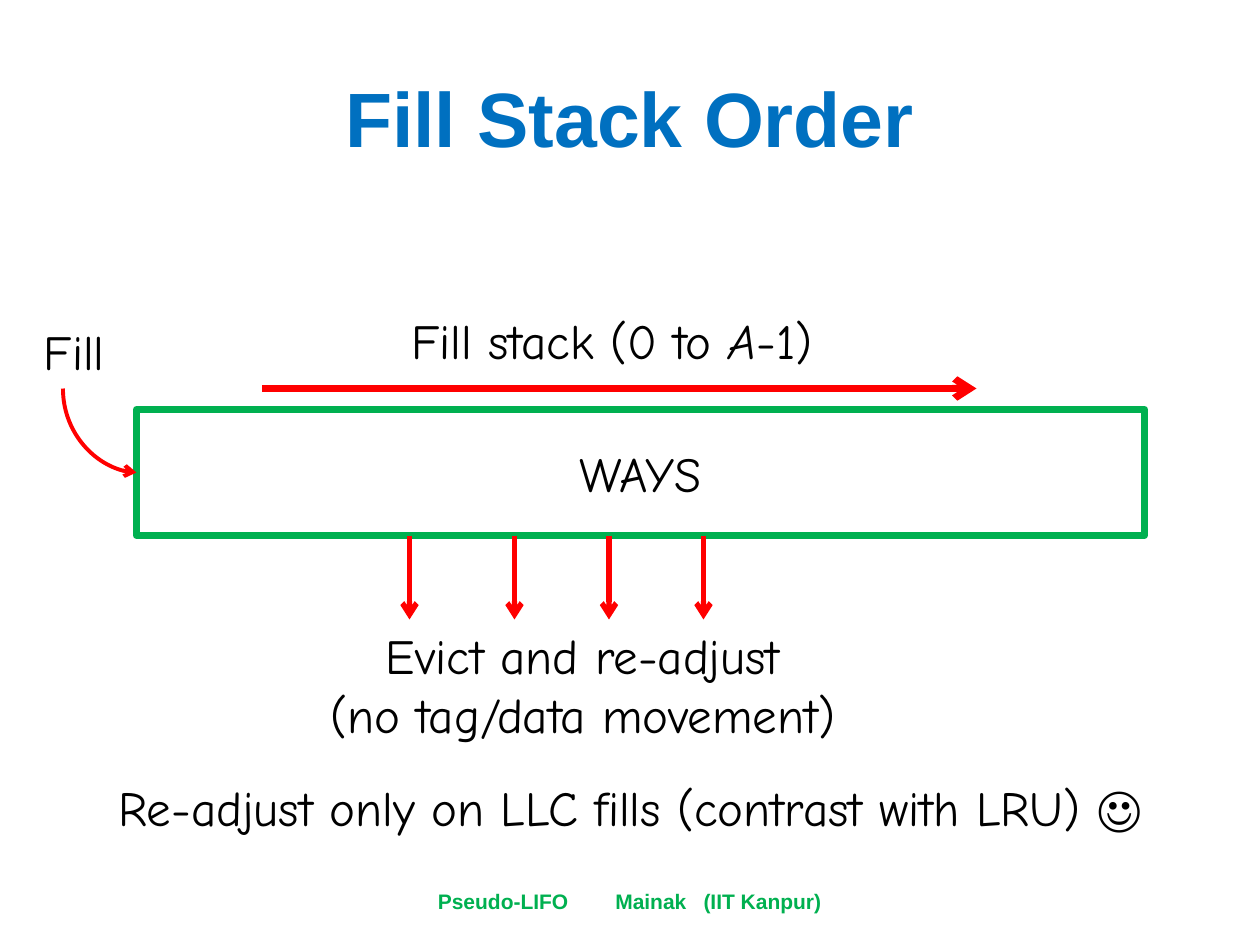
import dataclasses

import lxml.etree
import pptx
import pptx.dml.color
import pptx.enum.shapes
import pptx.enum.text
import pptx.oxml.ns
import pptx.util

COLUMNS, ROWS = 120, 90
CELL = pptx.util.Inches(10) // COLUMNS
CENTER = pptx.enum.text.PP_ALIGN.CENTER
LEFT = pptx.enum.text.PP_ALIGN.LEFT
MIDDLE = pptx.enum.text.MSO_ANCHOR.MIDDLE
TOP = pptx.enum.text.MSO_ANCHOR.TOP


@dataclasses.dataclass(frozen=True)
class Theme:
    """Colours, fonts and type sizes of the slide."""
    blue: str = "0070C0"
    green: str = "00B050"
    red: str = "FF0000"
    black: str = "000000"
    heading_font: str = "Arial"
    body_font: str = "Comic Neue"
    title_size: int = 44
    body_size: int = 28
    footer_size: int = 12


THEME = Theme()


def cells(*counts):
    """Turn grid counts into lengths."""
    return [pptx.util.Emu(round(count * CELL)) for count in counts]


def color(value):
    """Return the colour for a hex value."""
    return pptx.dml.color.RGBColor.from_string(value)


def add_child(parent, tag, **attributes):
    """Append a drawing element to a parent."""
    return lxml.etree.SubElement(parent, pptx.oxml.ns.qn(tag), attributes)


def format_text(frame, align=CENTER, font=THEME.body_font, size=THEME.body_size,
                fill=THEME.black, bold=False):
    """Format every run of a text frame."""
    for paragraph in frame.paragraphs:
        paragraph.alignment = align
        for run in paragraph.runs:
            run.font.name = font
            run.font.size = pptx.util.Pt(size)
            run.font.bold = bold
            run.font.color.rgb = color(fill)


def add_text(slide, box, text, anchor=TOP, wrap=True, **style):
    """Add a text box on the grid and return its frame."""
    frame = slide.shapes.add_textbox(*cells(*box)).text_frame
    frame.text = text
    frame.word_wrap = wrap
    frame.vertical_anchor = anchor
    format_text(frame, **style)
    return frame


def add_stack_label(slide, box):
    """Add the fill stack label with its italic variable."""
    frame = add_text(slide, box, "", wrap=False)
    for text in ("Fill stack (0 to ", "A", "-1)"):
        run = frame.paragraphs[0].add_run()
        run.text = text
        run.font.italic = text == "A"
    format_text(frame, align=LEFT)


def add_footer(slide, box, text, indent, stops):
    """Add the footer with its parts set on tab stops."""
    frame = add_text(slide, box, text, anchor=MIDDLE, align=LEFT, bold=True,
                     font=THEME.heading_font, size=THEME.footer_size, fill=THEME.green)
    frame.margin_left = cells(indent)[0]
    tabs = add_child(frame.paragraphs[0]._p.get_or_add_pPr(), "a:tabLst")
    for stop in cells(*stops):
        add_child(tabs, "a:tab", pos=str(stop), algn="l")


def add_ways(slide, box):
    """Add the outlined rectangle for the cache ways."""
    shape = slide.shapes.add_shape(pptx.enum.shapes.MSO_SHAPE.RECTANGLE, *cells(*box))
    shape.shadow.inherit = False
    shape.fill.background()
    shape.line.color.rgb = color(THEME.green)
    shape.line.width = pptx.util.Pt(4)
    shape.text_frame.text = "WAYS"
    shape.text_frame.vertical_anchor = MIDDLE
    format_text(shape.text_frame)


def add_arrow(slide, begin, end, width, kind=pptx.enum.shapes.MSO_CONNECTOR.STRAIGHT):
    """Add a red arrow between two grid points."""
    connector = slide.shapes.add_connector(kind, *cells(*begin, *end))
    connector.line.color.rgb = color(THEME.red)
    connector.line.width = pptx.util.Pt(width)
    add_child(connector.line._get_or_add_ln(), "a:tailEnd", type="arrow")
    add_child(connector._element.spPr, "a:effectLst")
    return connector


def add_bend(slide, begin, end, width):
    """Add a curved arrow that leaves downwards and arrives from the left."""
    middle_x, middle_y = (begin[0] + end[0]) / 2, (begin[1] + end[1]) / 2
    half_x, half_y = (end[0] - begin[0]) / 2, (end[1] - begin[1]) / 2
    connector = add_arrow(slide, (middle_x + half_y, middle_y - half_x),
                          (middle_x - half_y, middle_y + half_x), width,
                          pptx.enum.shapes.MSO_CONNECTOR.CURVE)
    properties = connector._element.spPr
    properties.find(pptx.oxml.ns.qn("a:prstGeom")).set("prst", "curvedConnector2")
    properties.find(pptx.oxml.ns.qn("a:xfrm")).set("rot", str(270 * 60000))


def main():
    """Build and save the slide."""
    presentation = pptx.Presentation()
    presentation.slide_width, presentation.slide_height = cells(COLUMNS, ROWS)
    slide = presentation.slides.add_slide(presentation.slide_layouts[6])

    add_text(slide, (6, 3.6, 108, 15), "Fill Stack Order", anchor=MIDDLE, bold=True,
             font=THEME.heading_font, size=THEME.title_size, fill=THEME.blue)
    add_footer(slide, (34, 83.4, 52, 4.8), "Pseudo-LIFO\tMainak\t(IIT Kanpur)",
               7.7, (16.9, 25.3))
    add_ways(slide, (13, 39, 96, 12))
    add_text(slide, (3, 30, 9.1, 6.9), "Fill", wrap=False, align=LEFT)
    add_bend(slide, (6, 37), (13, 45), 2.25)
    add_stack_label(slide, (38, 29, 45.2, 6.9))
    add_arrow(slide, (25, 37), (93, 37), 4)
    add_text(slide, (24, 59, 63, 12.5), "Evict and re-adjust\n(no tag/data movement)")
    for column in (39, 49, 58, 67):
        add_arrow(slide, (column, 51), (column, 59), 3)
    add_text(slide, (0, 73.5, COLUMNS, 6.9),
             "Re-adjust only on LLC fills (contrast with LRU) ☺")

    presentation.save("out.pptx")


if __name__ == "__main__":
    main()
